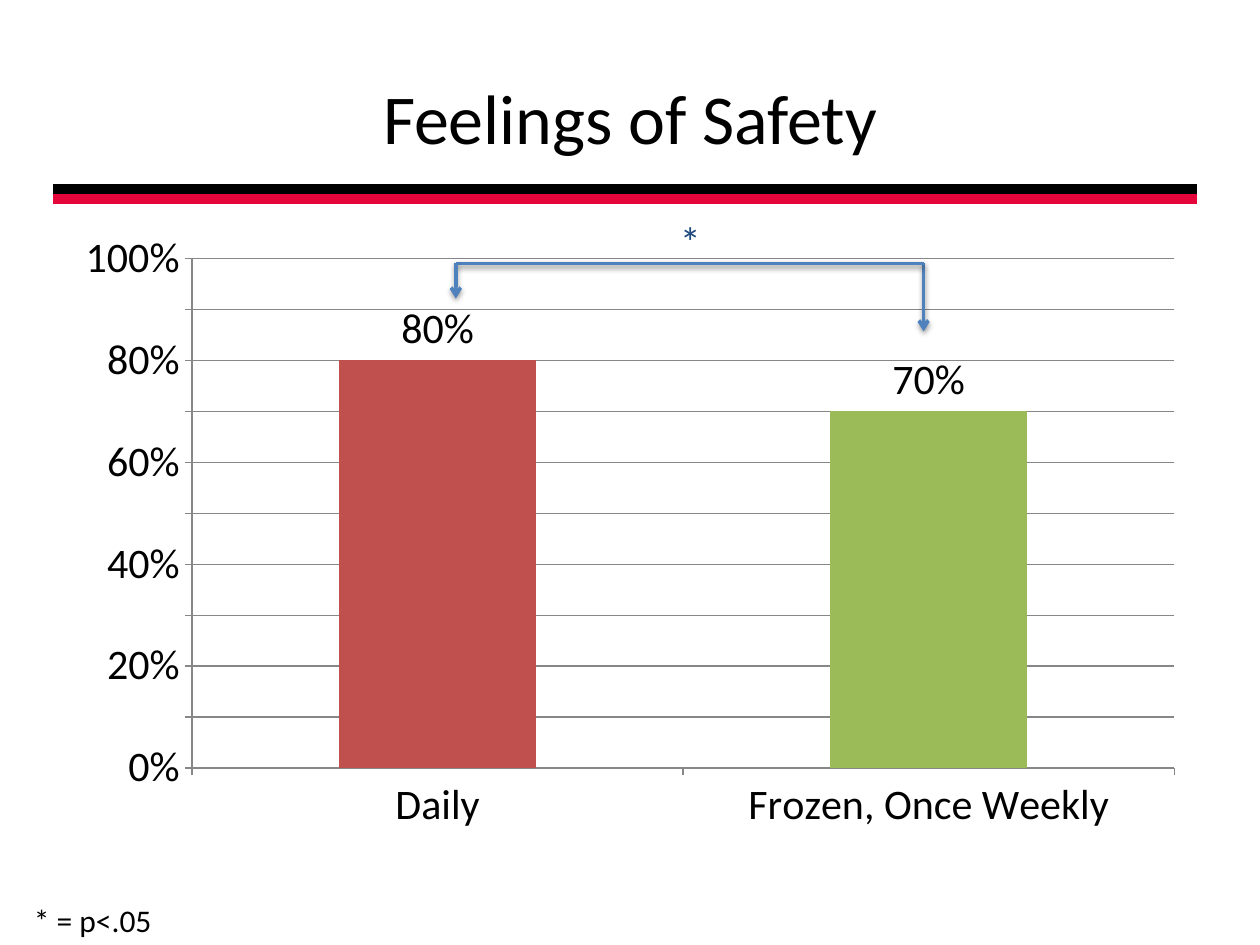
"""Build the Feelings of Safety slide: a two-column chart with a significance bracket."""
from lxml import etree
from pptx import Presentation
from pptx import util as u
from pptx.chart import data
from pptx.dml import color
from pptx.enum import chart as charts, shapes, text
from pptx.oxml import ns

FONT = "Calibri"
BLACK, RED, BLUE, NAVY, GREY = "000000", "E5053A", "4F81BD", "1F497D", "878787"
COLUMNS = [("Daily", 0.8, "C0504D"), ("Frozen, Once Weekly", 0.7, "9BBB59")]
TEXTS = [
    ("Feelings of Safety", (36, 21.6, 648, 90), 40, BLACK, "CENTER", "MIDDLE"),
    ("*", (349.2, 119.5, 90.7, 28.8), 24, NAVY, "CENTER", "TOP"),
    ("* = p<.05", (12.24, 511.2, 565.2, 28.8), 18, BLACK, "LEFT", "TOP"),
]
RULES = [(108, BLACK), (113.76, RED)]
RULE_LEFT, RULE_RIGHT = 30.24, 684
BRACKET_LEFT, BRACKET_RIGHT, BRACKET_TOP = 260.5, 527.8, 150.5
BRACKET = [
    (BRACKET_RIGHT, BRACKET_TOP, BRACKET_RIGHT, 189.4, True),
    (BRACKET_LEFT, BRACKET_TOP, BRACKET_RIGHT, BRACKET_TOP, False),
    (BRACKET_LEFT, BRACKET_TOP, BRACKET_LEFT, 170.6, True),
]


def rgb(code):
    return color.RGBColor.from_string(code)


def style_font(font, size, code):
    font.name, font.size = FONT, u.Pt(size)
    font.color.rgb = rgb(code)


def add_line(page, ends, code, width, arrow=False, shadow=False):
    line = page.shapes.add_connector(
        shapes.MSO_CONNECTOR.STRAIGHT, *[u.Pt(value) for value in ends])
    line.line.color.rgb = rgb(code)
    line.line.width = u.Pt(width)
    if arrow:
        etree.SubElement(line.line._get_or_add_ln(), ns.qn("a:tailEnd"), type="arrow")
    effects = etree.SubElement(line._element.spPr, ns.qn("a:effectLst"))
    if shadow:
        outer = etree.SubElement(
            effects, ns.qn("a:outerShdw"), blurRad=str(u.Pt(3.1)),
            dist=str(u.Pt(1.6)), dir="5400000", rotWithShape="0")
        tint = etree.SubElement(outer, ns.qn("a:srgbClr"), val=BLACK)
        etree.SubElement(tint, ns.qn("a:alpha"), val="38000")


def add_text(page, words, place, size, code, align, anchor):
    box = page.shapes.add_textbox(*[u.Pt(value) for value in place])
    frame = box.text_frame
    frame.word_wrap = True
    frame.vertical_anchor = text.MSO_ANCHOR[anchor]
    frame.text = words
    para = frame.paragraphs[0]
    para.alignment = text.PP_ALIGN[align]
    style_font(para.runs[0].font, size, code)


def add_columns(page):
    names, values, fills = zip(*COLUMNS)
    figures = data.CategoryChartData(number_format="0%")
    figures.categories = names
    figures.add_series("Series 1", values)
    chart = page.shapes.add_chart(
        charts.XL_CHART_TYPE.COLUMN_CLUSTERED,
        u.Pt(36), u.Pt(126), u.Pt(648), u.Pt(356.4), figures).chart
    chart.has_legend = chart.has_title = False
    style_font(chart.font, 24, BLACK)

    scale = chart.value_axis
    scale.minimum_scale, scale.maximum_scale, scale.major_unit = 0, 1, 0.1
    scale.has_major_gridlines = True
    scale.tick_labels.number_format = "0%"
    scale.tick_labels.number_format_is_linked = False
    for axis in (scale, chart.category_axis):
        axis.major_tick_mark = charts.XL_TICK_MARK.OUTSIDE
    for part in (scale, chart.category_axis, scale.major_gridlines):
        part.format.line.color.rgb = rgb(GREY)
        part.format.line.width = u.Pt(0.75)

    plot = chart.plots[0]
    plot.gap_width = 150
    plot.vary_by_categories = False
    plot.has_data_labels = True
    labels = plot.data_labels
    labels.show_value = True
    labels.number_format, labels.number_format_is_linked = "0%", False
    labels.position = charts.XL_LABEL_POSITION.OUTSIDE_END
    style_font(labels.font, 24, BLACK)
    series = plot.series[0]
    series.format.fill.solid()
    series.format.fill.fore_color.rgb = rgb(BLUE)
    for index, code in enumerate(fills):
        fill = series.points[index].format.fill
        fill.solid()
        fill.fore_color.rgb = rgb(code)


def main():
    deck = Presentation()
    deck.slide_width, deck.slide_height = u.Pt(720), u.Pt(540)
    page = deck.slides.add_slide(deck.slide_layouts[6])
    for top, code in RULES:
        add_line(page, (RULE_LEFT, top, RULE_RIGHT, top), code, 6)
    add_columns(page)
    for *ends, arrow in BRACKET:
        add_line(page, ends, BLUE, 2, arrow, shadow=True)
    for entry in TEXTS:
        add_text(page, *entry)
    deck.save("out.pptx")


if __name__ == "__main__":
    main()
